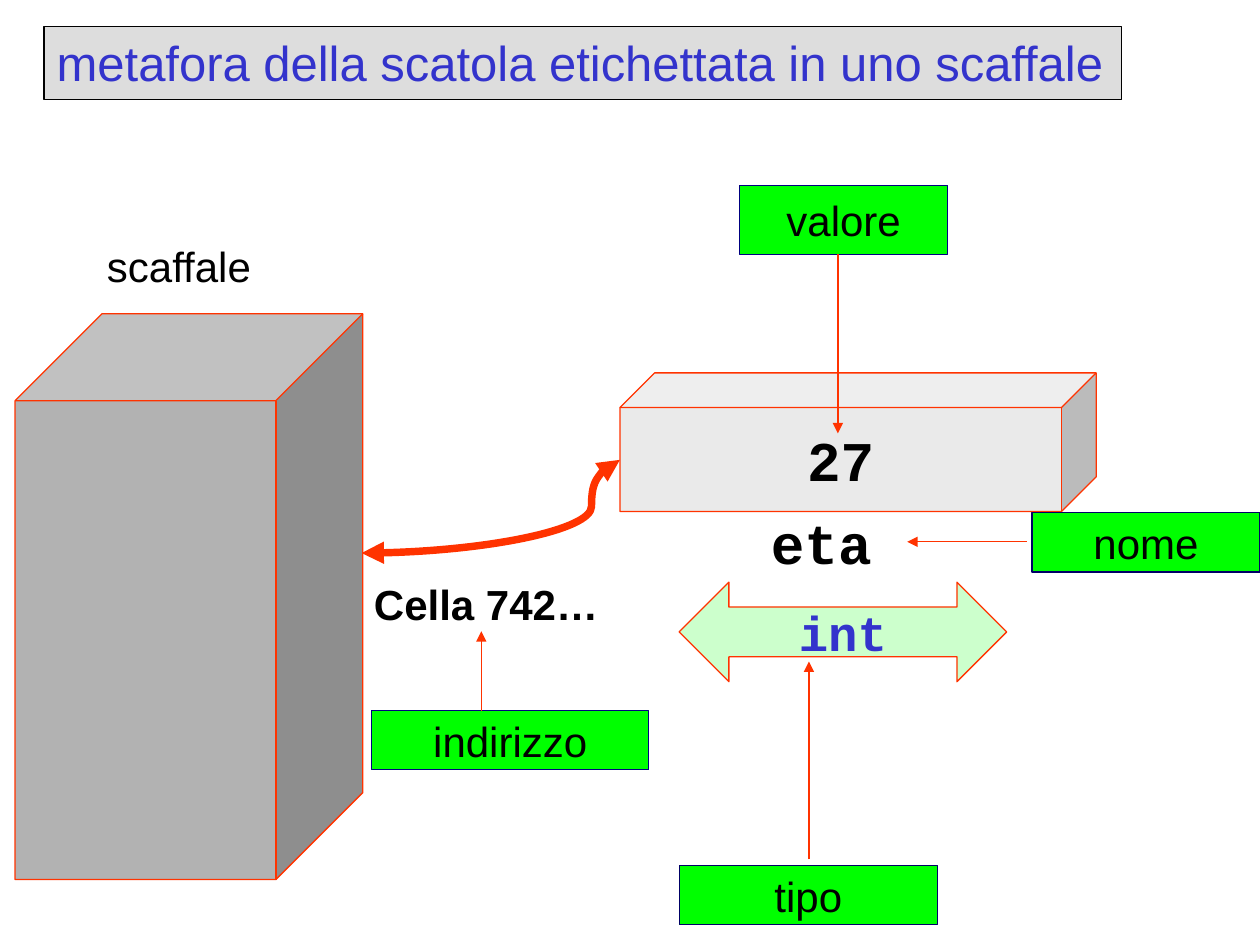
from dataclasses import dataclass

from pptx import Presentation
from pptx import util as u
from pptx.dml.color import RGBColor
from pptx.enum import shapes, text
from pptx.oxml.ns import qn
from lxml import etree


@dataclass(frozen=True)
class Theme:
    black: str = "000000"
    blue: str = "3333CC"
    navy: str = "000080"
    dark_navy: str = "000066"
    red: str = "FF3300"
    green: str = "00FF00"
    pale_green: str = "CCFFCC"
    title_fill: str = "DDDDDD"
    box_fill: str = "EAEAEA"
    shelf_fill: str = "B2B2B2"
    sans: str = "Arial"
    mono: str = "Courier New"
    label: int = 24
    heading: int = 28
    value: int = 32
    thin: float = 0.75
    thick: float = 4.25


class SlideBuilder:
    COLUMNS, ROWS = 100, 75

    def __init__(self, presentation, theme):
        self.theme = theme
        self.column = presentation.slide_width / self.COLUMNS
        self.row = presentation.slide_height / self.ROWS
        self.slide = presentation.slides.add_slide(presentation.slide_layouts[5])

    def place(self, left, top, width, height):
        return (round(left * self.column), round(top * self.row),
                round(width * self.column), round(height * self.row))

    def paint(self, shape, fill, line):
        shape.fill.solid()
        shape.fill.fore_color.rgb = RGBColor.from_string(fill)
        shape.line.color.rgb = RGBColor.from_string(line)
        shape.line.width = u.Pt(self.theme.thin)

    def set_words(self, shape, words, size, font=None, color=None, bold=False,
                  align=text.PP_ALIGN.LEFT, anchor=text.MSO_ANCHOR.TOP):
        frame = shape.text_frame
        frame.word_wrap = True
        frame.auto_size = text.MSO_AUTO_SIZE.NONE
        frame.vertical_anchor = anchor
        frame.text = words
        paragraph = frame.paragraphs[0]
        paragraph.alignment = align
        paragraph.font.name = font or self.theme.sans
        paragraph.font.size = u.Pt(size)
        paragraph.font.bold = bold
        paragraph.font.color.rgb = RGBColor.from_string(color or self.theme.black)

    def title(self, words, *box):
        shape = self.slide.shapes.title
        shape.left, shape.top, shape.width, shape.height = self.place(*box)
        self.paint(shape, self.theme.title_fill, self.theme.black)
        self.set_words(shape, words, self.theme.heading, color=self.theme.blue)

    def caption(self, words, *box, **style):
        shape = self.slide.shapes.add_textbox(*self.place(*box))
        self.set_words(shape, words, **{"size": self.theme.label, **style})

    def figure(self, kind, fill, line, *box, words="", **style):
        shape = self.slide.shapes.add_shape(kind, *self.place(*box))
        shape.shadow.inherit = False
        self.paint(shape, fill, line)
        if words:
            self.set_words(shape, words, align=text.PP_ALIGN.CENTER,
                           anchor=text.MSO_ANCHOR.MIDDLE, **style)

    def label(self, words, *box, line=None):
        self.figure(shapes.MSO_SHAPE.RECTANGLE, self.theme.green,
                    line or self.theme.navy, *box,
                    words=words, size=self.theme.label)

    def arrow(self, start, end, kind=shapes.MSO_CONNECTOR.STRAIGHT,
              width=None, ends=("tailEnd",), bend=None):
        connector = self.slide.shapes.add_connector(
            kind, *self.place(*start, *end))
        connector.line.color.rgb = RGBColor.from_string(self.theme.red)
        connector.line.width = u.Pt(width or self.theme.thin)
        properties = connector._element.spPr
        for end_name in ends:
            etree.SubElement(properties.find(qn("a:ln")), qn(f"a:{end_name}"),
                             type="triangle")
        etree.SubElement(properties, qn("a:effectLst"))
        if bend is not None:
            guides = properties.find(qn("a:prstGeom")).get_or_add_avLst()
            etree.SubElement(guides, qn("a:gd"), name="adj1",
                             fmla=f"val {round(bend * 100000)}")


def main():
    presentation = Presentation()
    presentation.slide_width = u.Inches(10)
    presentation.slide_height = u.Inches(7.5)
    theme = Theme()
    builder = SlideBuilder(presentation, theme)
    kinds = shapes.MSO_SHAPE

    builder.title("metafora della scatola etichettata in uno scaffale",
                  3.5, 2.1, 85.5, 5.8)

    builder.figure(kinds.CUBE, theme.box_fill, theme.red, 49.2, 29.6, 37.8, 11,
                   words="27", size=theme.value, font=theme.mono, bold=True)
    builder.arrow((49.2, 36.5), (28.7, 43.9), shapes.MSO_CONNECTOR.CURVE,
                  theme.thick, ("headEnd", "tailEnd"), bend=0.11)
    builder.caption("Cella 742…", 28.7, 45.4, 22, 5, bold=True)

    builder.label("nome", 81.9, 40.7, 18.1, 4.7, line=theme.dark_navy)
    builder.arrow((81.5, 43), (72, 43))

    builder.arrow((64.2, 68.2), (64.2, 52.5))
    builder.figure(kinds.LEFT_RIGHT_ARROW, theme.pale_green, theme.red,
                   53.9, 46.2, 26, 7.9, words="int", size=theme.heading,
                   font=theme.mono, color=theme.blue, bold=True)
    builder.label("tipo", 53.9, 68.7, 20.5, 4.7, line=theme.dark_navy)

    builder.label("valore", 58.7, 14.7, 16.5, 5.5)
    builder.arrow((66.5, 20.2), (66.5, 34.4))

    builder.label("indirizzo", 29.5, 56.4, 22, 4.7)
    builder.arrow((38.2, 56.4), (38.2, 50.1))

    builder.caption("eta", 60.2, 39.9, 10, 6.3, size=theme.value,
                    font=theme.mono, bold=True)
    builder.figure(kinds.CUBE, theme.shelf_fill, theme.red, 1.2, 24.9, 27.6, 44.9)
    builder.caption("scaffale", 7.5, 18.6, 13.5, 5)

    presentation.save("out.pptx")


if __name__ == "__main__":
    main()
